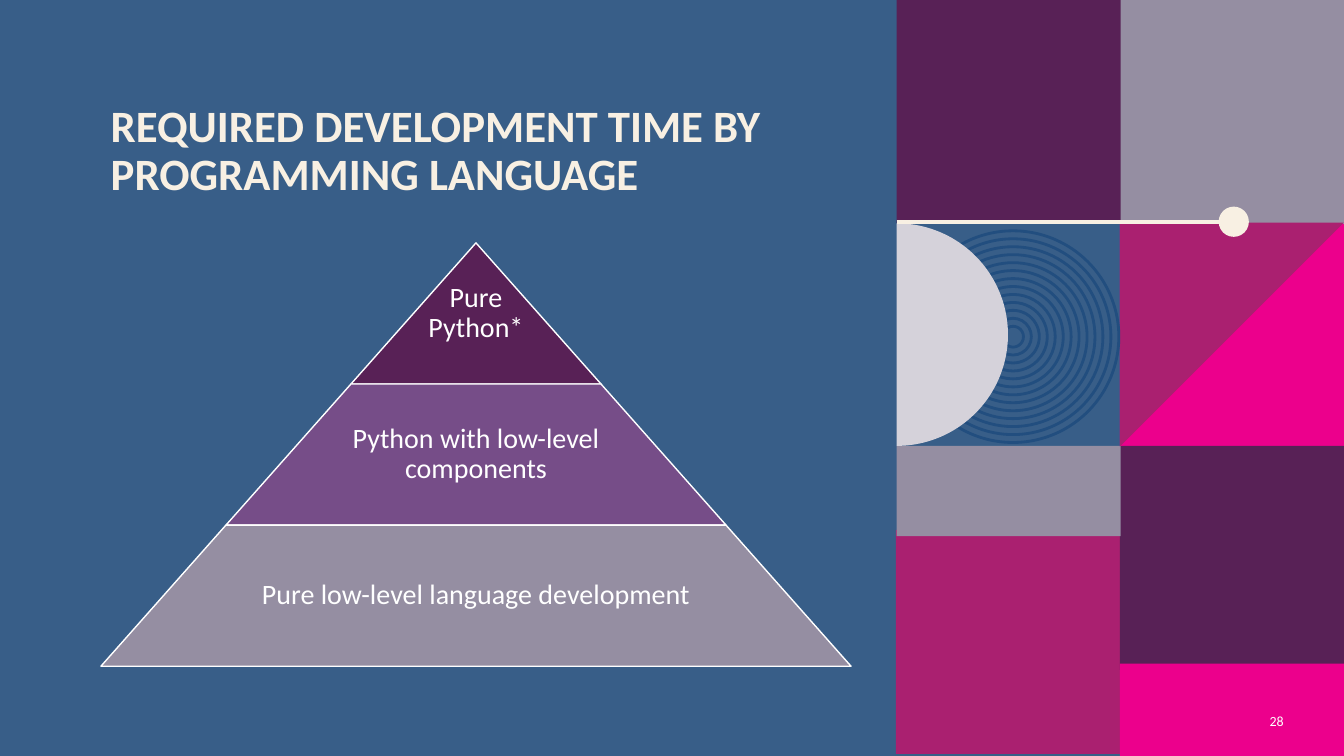
import math
from typing import NamedTuple

from lxml import etree
from pptx import Presentation
from pptx.dml.color import RGBColor
from pptx.enum import shapes, text
from pptx.oxml.ns import qn
from pptx.util import Pt

COLORS = {
    "blue": "385E88", "navy": "224E7F", "plum": "582156", "violet": "764D88",
    "gray": "958EA2", "pale": "D5D2DA", "berry": "AA2070", "pink": "EC008C",
    "cream": "F8F0E3", "white": "FFFFFF",
}
FONT = "Calibri"
COL1, COL2, TILE = 640, 800, 160
RECT, OVAL = shapes.MSO_SHAPE.RECTANGLE, shapes.MSO_SHAPE.OVAL
ALIGN, ANCHOR = text.PP_ALIGN, text.MSO_ANCHOR


class Box(NamedTuple):
    left: float
    top: float
    width: float
    height: float


class Tile(NamedTuple):
    box: Box
    color: str


class Tier(NamedTuple):
    label: str
    color: str
    label_share: float  # label width as a share of the tier's base


TILES = [
    Tile(Box(COL2, 158.5, TILE, TILE), "pink"),
    Tile(Box(COL2, 0, TILE, TILE), "gray"),
    Tile(Box(COL1 + 0.5, -0.5, TILE, TILE), "plum"),
    Tile(Box(COL1, 378.5, TILE, TILE), "berry"),
    Tile(Box(COL2, 318.5, TILE, TILE), "plum"),
    Tile(Box(COL2, 474, TILE, 66), "pink"),
    Tile(Box(COL1 + 0.5, 318.5, TILE, 64.5), "gray"),
]
TIERS = [
    Tier("Pure\nPython*", "plum", 1),
    Tier("Python with low-level components", "violet", 0.65),
    Tier("Pure low-level language development", "gray", 0.65),
]


def rgb(name: str) -> RGBColor:
    return RGBColor.from_string(COLORS[name])


def style(sp, fill: str | None, line: str | None = None, weight: float = 1) -> None:
    sp.shadow.inherit = False
    if fill:
        sp.fill.solid()
        sp.fill.fore_color.rgb = rgb(fill)
    else:
        sp.fill.background()
    if line:
        sp.line.color.rgb = rgb(line)
        sp.line.width = Pt(weight)
    else:
        sp.line.fill.background()


def add_preset(s, kind, box: Box, fill: str | None, line: str | None = None,
               weight: float = 1):
    sp = s.shapes.add_shape(kind, *map(Pt, box))
    style(sp, fill, line, weight)
    return sp


def add_outline(s, points: list[tuple[float, float]], fill: str) -> None:
    start, *rest = [(Pt(x), Pt(y)) for x, y in points]
    builder = s.shapes.build_freeform(*start)
    builder.add_line_segments(rest, close=True)
    style(builder.convert_to_shape(), fill)


def add_text(s, box: Box, words: str, size: float, color: str, align,
             anchor=ANCHOR.MIDDLE, bold: bool = False, inset: float | None = None,
             spacing: float = 1, after: float = 0) -> None:
    tf = s.shapes.add_textbox(*map(Pt, box)).text_frame
    tf.word_wrap = True
    tf.vertical_anchor = anchor
    if inset is not None:
        tf.margin_left = tf.margin_right = tf.margin_top = tf.margin_bottom = Pt(inset)
    p = tf.paragraphs[0]
    p.text = words
    p.alignment, p.line_spacing, p.space_after = align, spacing, Pt(after)
    p.font.name, p.font.size, p.font.bold = FONT, Pt(size), bold
    p.font.color.rgb = rgb(color)


def add_rings(s, cx: float, cy: float) -> None:
    """Draw 13 concentric rings, from the widest inwards."""
    for i in range(13):
        d = 151.2 - 11.36 * i
        add_preset(s, OVAL, Box(cx - d / 2, cy - d / 2, d, d), None, "navy", 2)


def add_half_disc(s, left: float, cy: float, radius: float) -> None:
    angles = [math.radians(a) for a in range(-90, 91, 2)]
    add_outline(s, [(left + radius * math.cos(a), cy + radius * math.sin(a))
                    for a in angles], "pale")


def add_slider(s, y: float) -> None:
    """Draw the cream line with its round knob."""
    line = s.shapes.add_connector(shapes.MSO_CONNECTOR.STRAIGHT,
                                  Pt(COL1 + 0.5), Pt(y), Pt(880.5), Pt(y))
    line.line.color.rgb = rgb("cream")
    line.line.width = Pt(3)
    etree.SubElement(line._element.spPr, qn("a:effectLst"))
    add_preset(s, OVAL, Box(870.5, y - 10.8, 21.6, 21.6), "cream")


def add_pyramid(s, cx: float, top: float, step: float, height: float) -> None:
    """Stack the tiers, each one step wider than the tier above."""
    for i, tier in enumerate(TIERS):
        width, y = step * (i + 1), top + height * i
        sp = add_preset(s, shapes.MSO_SHAPE.TRAPEZOID,
                        Box(cx - width / 2, y, width, height), tier.color, "white")
        sp.adjustments[0] = step / 2 / height
        label = width * tier.label_share
        add_text(s, Box(cx - label / 2, y, label, height), tier.label, 20, "white",
                 ALIGN.CENTER, inset=2, spacing=0.9, after=7)


def main() -> None:
    prs = Presentation()
    prs.slide_width, prs.slide_height = Pt(960), Pt(540)
    s = prs.slides.add_slide(prs.slide_layouts[6])
    s.background.fill.solid()
    s.background.fill.fore_color.rgb = rgb("blue")

    for tile in TILES:
        add_preset(s, RECT, tile.box, tile.color)
    add_outline(s, [(960, 159), (COL2, 319), (COL2, 159)], "berry")
    add_rings(s, 723.6, 240.5)
    add_half_disc(s, COL1 + 0.5, 239, 79.5)
    add_slider(s, 158.4)

    add_text(s, Box(72, 70.5, 536, 104.5),
             "REQUIRED DEVELOPMENT TIME BY PROGRAMMING LANGUAGE", 32, "cream",
             ALIGN.LEFT, ANCHOR.TOP, bold=True, spacing=0.9)
    add_pyramid(s, cx=340, top=173.5, step=178.6, height=100.8)
    add_text(s, Box(888, 500.5, 36, 29), "28", 10, "white", ALIGN.RIGHT)
    prs.save("out.pptx")


if __name__ == "__main__":
    main()
